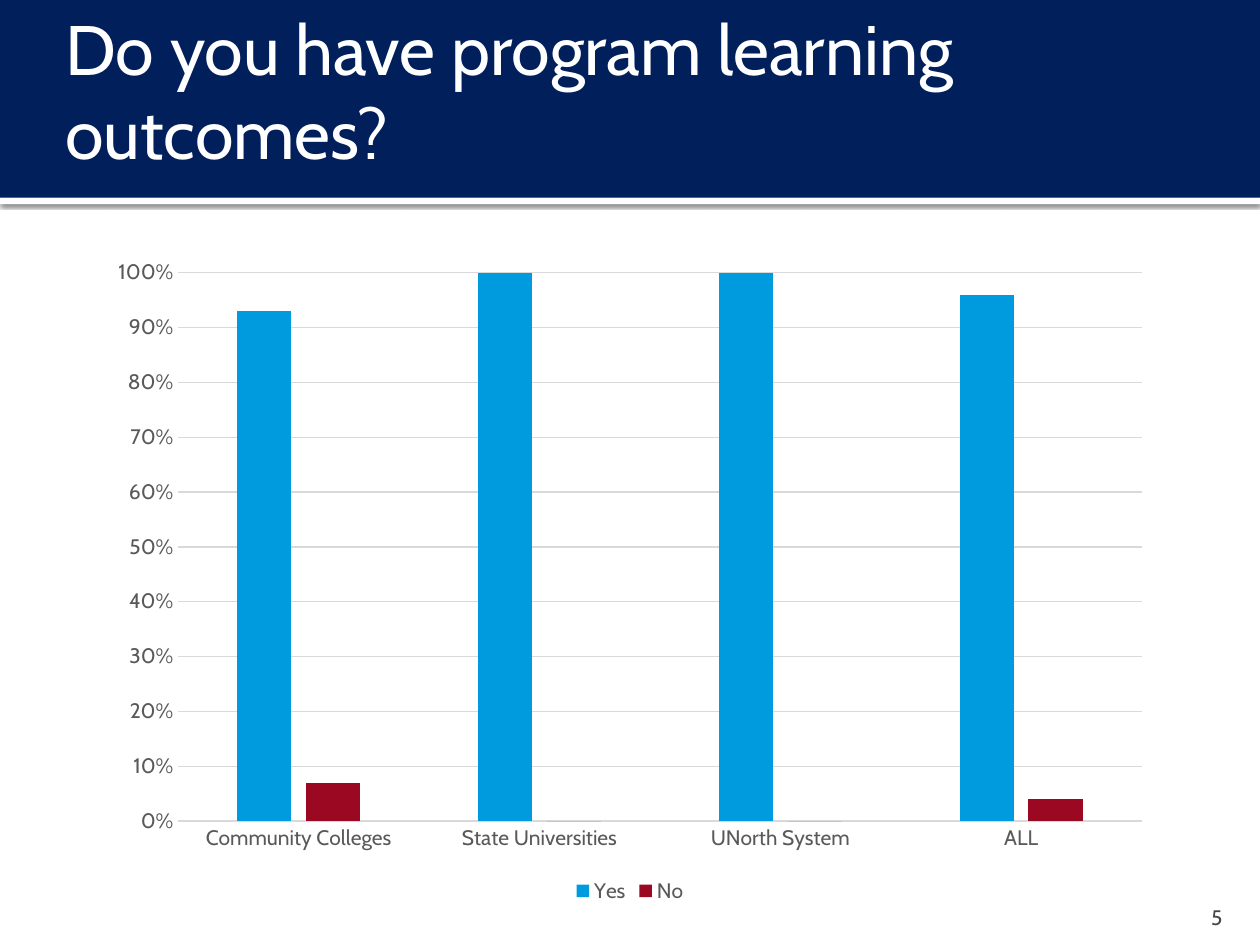
from lxml import etree
from pptx import Presentation
from pptx.chart.data import CategoryChartData
from pptx.dml.color import RGBColor
from pptx.enum.chart import XL_CHART_TYPE as ChartType, XL_LEGEND_POSITION as LegendPosition
from pptx.enum.chart import XL_TICK_MARK as TickMark
from pptx.enum.shapes import MSO_SHAPE as Shape
from pptx.enum.text import MSO_ANCHOR as Anchor, MSO_AUTO_SIZE as AutoSize, PP_ALIGN as Align
from pptx.oxml import parse_xml
from pptx.oxml.ns import nsdecls
from pptx.util import Inches, Pt

NAVY = RGBColor(0x00, 0x1F, 0x5B)
WHITE = RGBColor(0xFF, 0xFF, 0xFF)
BLUE = RGBColor(0x00, 0x9B, 0xDE)
RED = RGBColor(0x9B, 0x08, 0x21)
LABEL_GRAY = RGBColor(0x59, 0x59, 0x59)
GRID_GRAY = RGBColor(0xD9, 0xD9, 0xD9)
NUMBER_GRAY = RGBColor(0x45, 0x45, 0x45)

INSTITUTIONS = ["Community Colleges", "State Universities", "UNorth System", "ALL"]
ANSWERS = [("Yes", [0.93, 1, 1, 0.96], BLUE), ("No", [0.07, 0, 0, 0.04], RED)]


def set_font(font, size, color):
    font.name = "Cabin"
    font.size = Pt(size)
    font.color.rgb = color


def set_line(line):
    line.color.rgb = GRID_GRAY
    line.width = Pt(0.75)


def add_band(slide, top, height, color):
    band = slide.shapes.add_shape(
        Shape.RECTANGLE, Inches(0), Inches(top), Inches(10), Inches(height))
    band.shadow.inherit = False
    band.fill.solid()
    band.fill.fore_color.rgb = color
    band.line.fill.background()
    return band


def add_drop_shadow(band):
    effects = band._element.spPr.find(
        "{http://schemas.openxmlformats.org/drawingml/2006/main}effectLst")
    effects.append(parse_xml(
        f'<a:outerShdw {nsdecls("a")} blurRad="{Pt(2.5)}" dist="{Pt(0.8)}" '
        'dir="5400000" algn="t" rotWithShape="0">'
        '<a:srgbClr val="000000"><a:alpha val="60000"/></a:srgbClr></a:outerShdw>'))


def fill_title(slide, wording):
    title = slide.shapes.title
    slide.shapes._spTree.append(title._element)
    title.left, title.top = Inches(0.42), Inches(0.25)
    title.width, title.height = Inches(9.17), Inches(0.92)
    frame = title.text_frame
    frame.text = wording
    frame.auto_size = AutoSize.NONE
    frame.word_wrap = True
    frame.vertical_anchor = Anchor.MIDDLE
    frame.margin_left = Inches(0.1)
    frame.margin_right = frame.margin_top = frame.margin_bottom = Inches(0.05)
    heading = frame.paragraphs[0]
    heading.alignment = Align.LEFT
    set_font(heading.font, 40, WHITE)


def add_page_number(slide, number):
    frame = slide.shapes.add_textbox(
        Inches(9), Inches(7.08), Inches(0.8), Inches(0.3)).text_frame
    frame.word_wrap = True
    frame.vertical_anchor = Anchor.BOTTOM
    frame.margin_bottom = 0
    page = frame.paragraphs[0]
    page.text = number
    page.alignment = Align.RIGHT
    set_font(page.font, 12, NUMBER_GRAY)


def add_outcomes_chart(slide):
    data = CategoryChartData(number_format="0%")
    data.categories = INSTITUTIONS
    for answer, shares, _ in ANSWERS:
        data.add_series(answer, shares)
    chart = slide.shapes.add_chart(
        ChartType.COLUMN_CLUSTERED, Inches(0.77), Inches(1.96),
        Inches(8.46), Inches(5.25), data).chart
    chart.has_title = False
    set_font(chart.font, 12, LABEL_GRAY)

    chart.has_legend = True
    chart.legend.position = LegendPosition.BOTTOM
    chart.legend.include_in_layout = False
    set_font(chart.legend.font, 12, LABEL_GRAY)

    columns = chart.plots[0]
    columns.gap_width = 219
    columns.overlap = -27
    columns.vary_by_categories = False
    for series, (_, _, color) in zip(columns.series, ANSWERS):
        series.format.fill.solid()
        series.format.fill.fore_color.rgb = color

    for axis in (chart.category_axis, chart.value_axis):
        axis.major_tick_mark = axis.minor_tick_mark = TickMark.NONE
        set_font(axis.tick_labels.font, 12, LABEL_GRAY)
    set_line(chart.category_axis.format.line)

    share_axis = chart.value_axis
    share_axis.minimum_scale, share_axis.maximum_scale = 0, 1
    share_axis.major_unit = 0.1
    share_axis.tick_labels.number_format = "0%"
    share_axis.tick_labels.number_format_is_linked = False
    share_axis.format.line.fill.background()
    set_line(share_axis.major_gridlines.format.line)


def main():
    deck = Presentation()
    deck.slide_width, deck.slide_height = Inches(10), Inches(7.5)
    slide = deck.slides.add_slide(deck.slide_layouts.get_by_name("Title Only"))
    add_drop_shadow(add_band(slide, 1.57, 0.05, WHITE))
    add_band(slide, 0, 1.57, NAVY)
    add_page_number(slide, "5")
    fill_title(slide, "Do you have program learning outcomes?")
    add_outcomes_chart(slide)
    deck.save("out.pptx")


if __name__ == "__main__":
    main()
